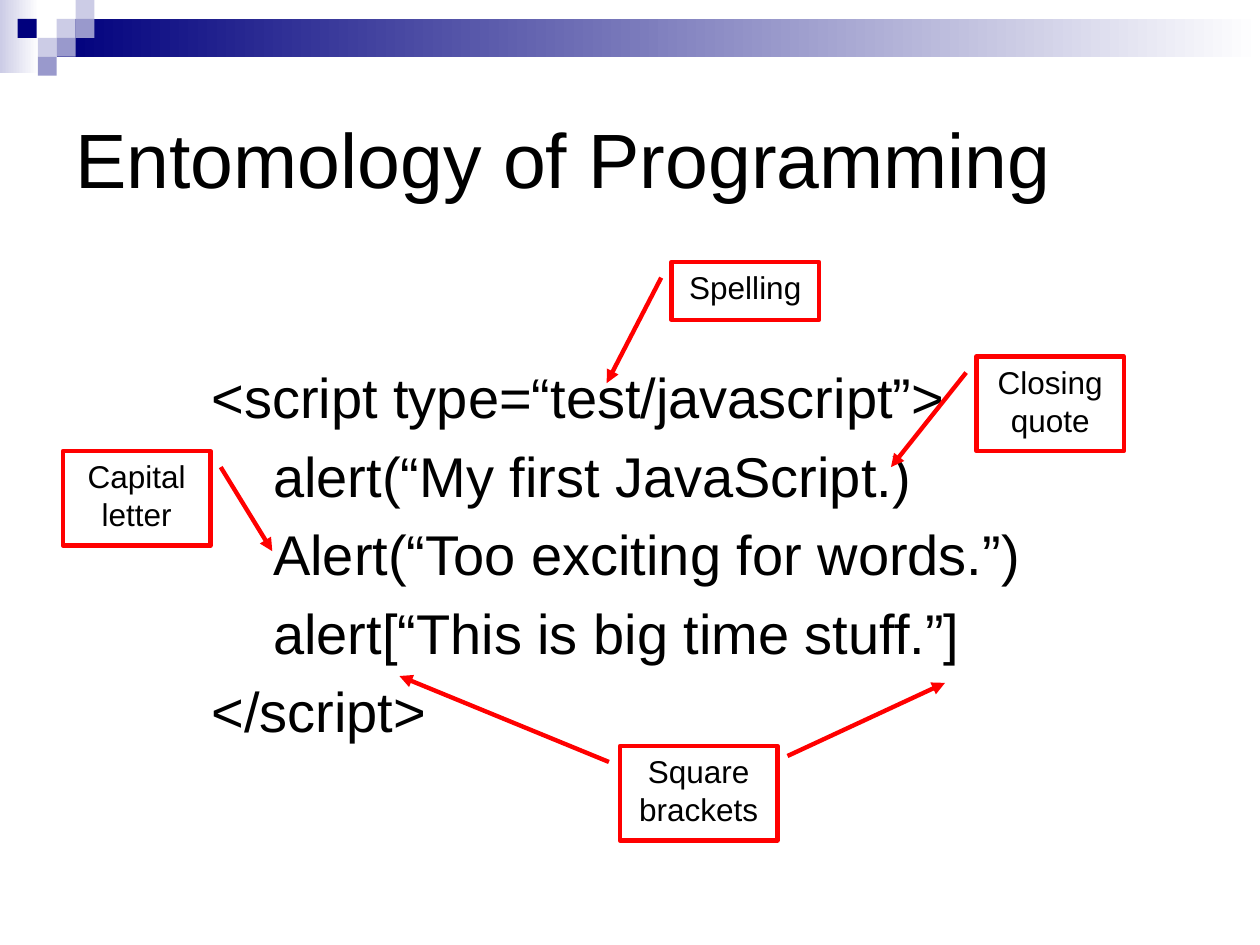
from lxml.etree import SubElement as Sub
from pptx import Presentation
from pptx.dml.color import RGBColor
from pptx.enum.shapes import MSO_CONNECTOR as Link, MSO_SHAPE as Form
from pptx.enum.text import MSO_ANCHOR as Anchor, PP_ALIGN as Align
from pptx.oxml.ns import qn
from pptx.util import Inches, Pt


def tint(code):
    return RGBColor.from_string(code)


class Deck:
    font, ink, red, width = "Arial", "000000", "FF0000", 2.5
    navy, mid, pale, white = "00007D", "9999CC", "CCCCE6", "FFFFFF"

    def __init__(self):
        self.prs = Presentation()
        self.prs.slide_width, self.prs.slide_height = Inches(10), Inches(7.5)
        self.slide = self.prs.slides.add_slide(self.prs.slide_layouts[6])
        self.shapes = self.slide.shapes

    def shape(self, form, box):
        item = self.shapes.add_shape(form, *map(Inches, box))
        item.shadow.inherit = False
        return item

    def block(self, box, *hues):
        item = self.shape(Form.RECTANGLE, box)
        item.line.fill.background()
        if len(hues) == 1:
            item.fill.solid()
            item.fill.fore_color.rgb = tint(hues[0])
            return
        item.fill.gradient()
        item.fill.gradient_angle = 0
        for stop, hue in zip(item.fill.gradient_stops, hues):
            stop.color.rgb = tint(hue)

    def add_run(self, para, text, size):
        run = para.add_run()
        run.text = text
        run.font.name, run.font.size = self.font, Pt(size)
        run.font.color.rgb = tint(self.ink)

    def text(self, box, lines, size, anchor=Anchor.TOP, gap=0):
        frame = self.shapes.add_textbox(*map(Inches, box)).text_frame
        frame.word_wrap, frame.vertical_anchor = True, anchor
        for i, (line, left) in enumerate(lines):
            para = frame.add_paragraph() if i else frame.paragraphs[0]
            self.add_run(para, line, size)
            props = para._p.get_or_add_pPr()
            props.set("marL", str(Inches(left)))
            if gap:
                space = Sub(props, qn("a:spcBef"))
                Sub(space, qn("a:spcPct"), val=str(gap * 1000))

    def stroke(self, item, end):
        item.line.color.rgb = tint(self.red)
        item.line.width = Pt(self.width)
        Sub(item._element.spPr.get_or_add_ln(), qn(end), type="triangle")

    def callout(self, box, label, points):
        item = self.shape(Form.LINE_CALLOUT_1, box)
        item.fill.background()
        self.stroke(item, "a:tailEnd")
        for i, value in enumerate(points):
            item.adjustments[i] = value
        frame = item.text_frame
        frame.word_wrap, frame.vertical_anchor = True, Anchor.TOP
        para = frame.paragraphs[0]
        para.alignment = Align.CENTER
        self.add_run(para, label, 18)

    def arrow(self, *ends):
        item = self.shapes.add_connector(Link.STRAIGHT, *map(Inches, ends))
        self.stroke(item, "a:headEnd")
        Sub(item._element.spPr, qn("a:effectLst"))


def main():
    deck = Deck()
    deck.block((0, 0, 0.31, 0.58), deck.pale, deck.white)
    deck.block((0.45, 0.15, 9.55, 0.3), deck.navy, deck.white)
    side = 0.15
    for left, top, hue in (
        (0.45, 0.15, deck.pale),
        (0.6, 0, deck.pale),
        (0.6, 0.15, deck.mid),
        (0.3, 0.3, deck.pale),
        (0.14, 0.15, deck.navy),
        (0.45, 0.3, deck.mid),
        (0.3, 0.45, deck.mid),
    ):
        deck.block((left, top, side, side), hue)

    title = [("Entomology of Programming", 0)]
    deck.text((0.5, 0.5, 9, 1.5), title, 44, Anchor.MIDDLE)
    step = 0.49
    code = [
        ("<script type=“test/javascript”>", 0),
        ("alert(“My first JavaScript.)", step),
        ("Alert(“Too exciting for words.”)", step),
        ("alert[“This is big time stuff.”]", step),
        ("</script>", 0),
    ]
    deck.text((1.58, 2.83, 7.08, 3.42), code, 32, gap=20)

    for box, label, points in (
        ((5.33, 2.08, 1.17, 0.46), "Spelling", (0.27, -0.07, 2.09, -0.44)),
        ((7.75, 2.83, 1.17, 0.75), "Closing quote", (0.17, -0.07, 1.17, -0.58)),
        ((0.5, 3.58, 1.17, 0.75), "Capital letter", (0.17, 1.07, 1.06, 1.42)),
        ((4.92, 5.92, 1.25, 0.75), "Square brackets", (0.17, -0.07, -0.74, -1.4)),
    ):
        deck.callout(box, label, points)
    deck.arrow(7.5, 5.42, 6.25, 6)
    deck.prs.save("out.pptx")


if __name__ == "__main__":
    main()
